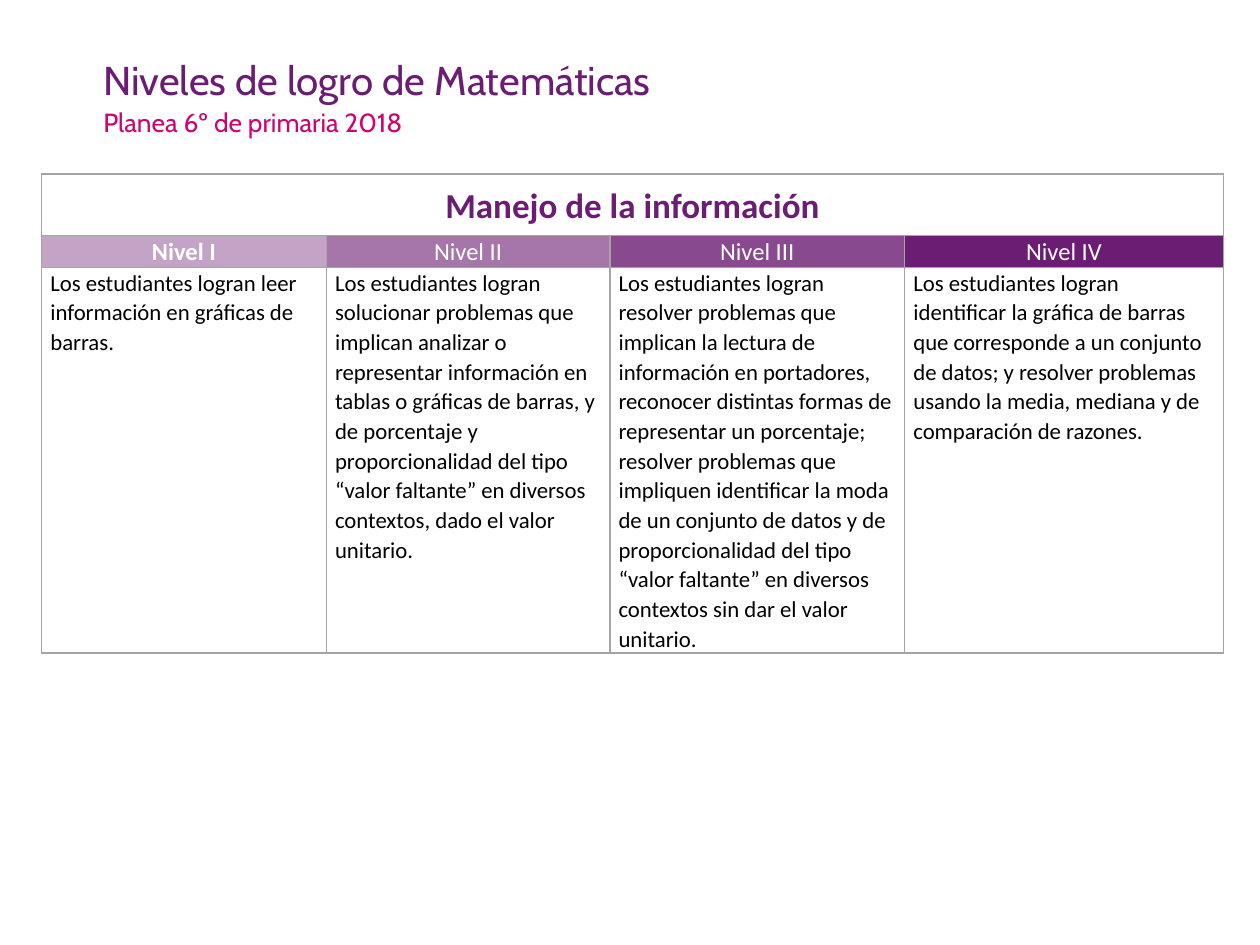
from lxml import etree
from pptx import Presentation
from pptx import util as u
from pptx.dml.color import RGBColor
from pptx.enum import text
from pptx.oxml import ns

theme = {
    "purple": "6B1C73", "magenta": "CC0671", "white": "FFFFFF",
    "black": "000000", "gray": "A5A5A5",
    "title": 23, "subtitle": 15, "heading": 20, "level": 14, "body": 13,
    "display": "Cabin", "plain": "Calibri",
}


def write(frame, words, color, size, font, spacing, align, bold=False):
    para = frame.paragraphs[0]
    for name, value in {"alignment": align, "line_spacing": spacing,
                        "space_before": u.Pt(0), "space_after": u.Pt(0)}.items():
        setattr(para, name, value)
    span = para.add_run()
    span.text = words
    for name, value in {"name": font, "size": u.Pt(theme[size]), "bold": bold}.items():
        setattr(span.font, name, value)
    span.font.color.rgb = RGBColor.from_string(theme[color])


def format_cell(cell, color, opacity, margin, anchor):
    for name, value in {"margin_left": u.Inches(margin), "margin_right": u.Inches(margin),
                        "margin_top": 0, "margin_bottom": 0,
                        "vertical_anchor": anchor}.items():
        setattr(cell, name, value)
    properties = cell._tc.get_or_add_tcPr()
    for side in ("lnL", "lnR", "lnT", "lnB"):
        line = etree.SubElement(properties, ns.qn(f"a:{side}"), w=str(u.Pt(1)))
        paint = etree.SubElement(line, ns.qn("a:solidFill"))
        etree.SubElement(paint, ns.qn("a:srgbClr"), val=theme["gray"])
    cell.fill.solid()
    cell.fill.fore_color.rgb = RGBColor.from_string(theme[color])
    if opacity < 100:
        tint = properties.find(ns.qn("a:solidFill")).find(ns.qn("a:srgbClr"))
        etree.SubElement(tint, ns.qn("a:alpha"), val=str(opacity * 1000))


deck = Presentation()
deck.slide_width, deck.slide_height = u.Inches(10), u.Inches(7.5)
page = deck.slides.add_slide(deck.slide_layouts[0])

headings = [
    ("Niveles de logro de Matemáticas", 0.43, 0.53, "purple", "title", 0.9),
    ("Planea 6º de primaria 2018", 0.74, 0.78, "magenta", "subtitle", 1.2),
]
for box, (words, top, height, color, size, spacing) in zip(page.placeholders, headings):
    for name, value in {"left": 0.72, "top": top, "width": 8.62, "height": height}.items():
        setattr(box, name, u.Inches(value))
    for name, value in {"word_wrap": True, "auto_size": text.MSO_AUTO_SIZE.NONE,
                        "vertical_anchor": text.MSO_ANCHOR.TOP}.items():
        setattr(box.text_frame, name, value)
    write(box.text_frame, words, color, size, theme["display"], spacing, text.PP_ALIGN.LEFT)

levels = [
    ("Nivel I", 2.26, 40,
     "Los estudiantes logran leer información en gráficas de barras."),
    ("Nivel II", 2.25, 60,
     "Los estudiantes logran solucionar problemas que implican analizar o representar "
     "información en tablas o gráficas de barras, y de porcentaje y proporcionalidad "
     "del tipo “valor faltante” en diversos contextos, dado el valor unitario."),
    ("Nivel III", 2.34, 80,
     "Los estudiantes logran resolver problemas que implican la lectura de información "
     "en portadores, reconocer distintas formas de representar un porcentaje; resolver "
     "problemas que impliquen identificar la moda de un conjunto de datos y de "
     "proporcionalidad del tipo “valor faltante” en diversos contextos sin dar el valor "
     "unitario."),
    ("Nivel IV", 2.53, 100,
     "Los estudiantes logran identificar la gráfica de barras que corresponde a un "
     "conjunto de datos; y resolver problemas usando la media, mediana y de comparación "
     "de razones."),
]
row_heights = [0.49, 0.25, 2.84]
table = page.shapes.add_table(
    len(row_heights), len(levels), u.Inches(0.33), u.Inches(1.38),
    u.Inches(9.38), u.Inches(sum(row_heights))).table
table.first_row = table.horz_banding = False
for row, height in zip(table.rows, row_heights):
    row.height = u.Inches(height)

table.cell(0, 0).merge(table.cell(0, len(levels) - 1))
write(table.cell(0, 0).text_frame, "Manejo de la información", "purple", "heading",
      theme["plain"], 1.07, text.PP_ALIGN.CENTER, True)

for index, (level, width, opacity, description) in enumerate(levels):
    table.columns[index].width = u.Inches(width)
    top_cell, level_cell, body_cell = (table.cell(row, index) for row in range(3))
    format_cell(top_cell, "white", 100, 0.05, text.MSO_ANCHOR.MIDDLE)
    format_cell(level_cell, "purple", opacity, 0.05, text.MSO_ANCHOR.TOP)
    format_cell(body_cell, "white", 100, 0.07, text.MSO_ANCHOR.TOP)
    write(level_cell.text_frame, level, "white", "level", theme["plain"], 1.07,
          text.PP_ALIGN.CENTER, index == 0)
    write(body_cell.text_frame, description, "black", "body", theme["plain"], 1.07,
          text.PP_ALIGN.LEFT)

deck.save("out.pptx")
